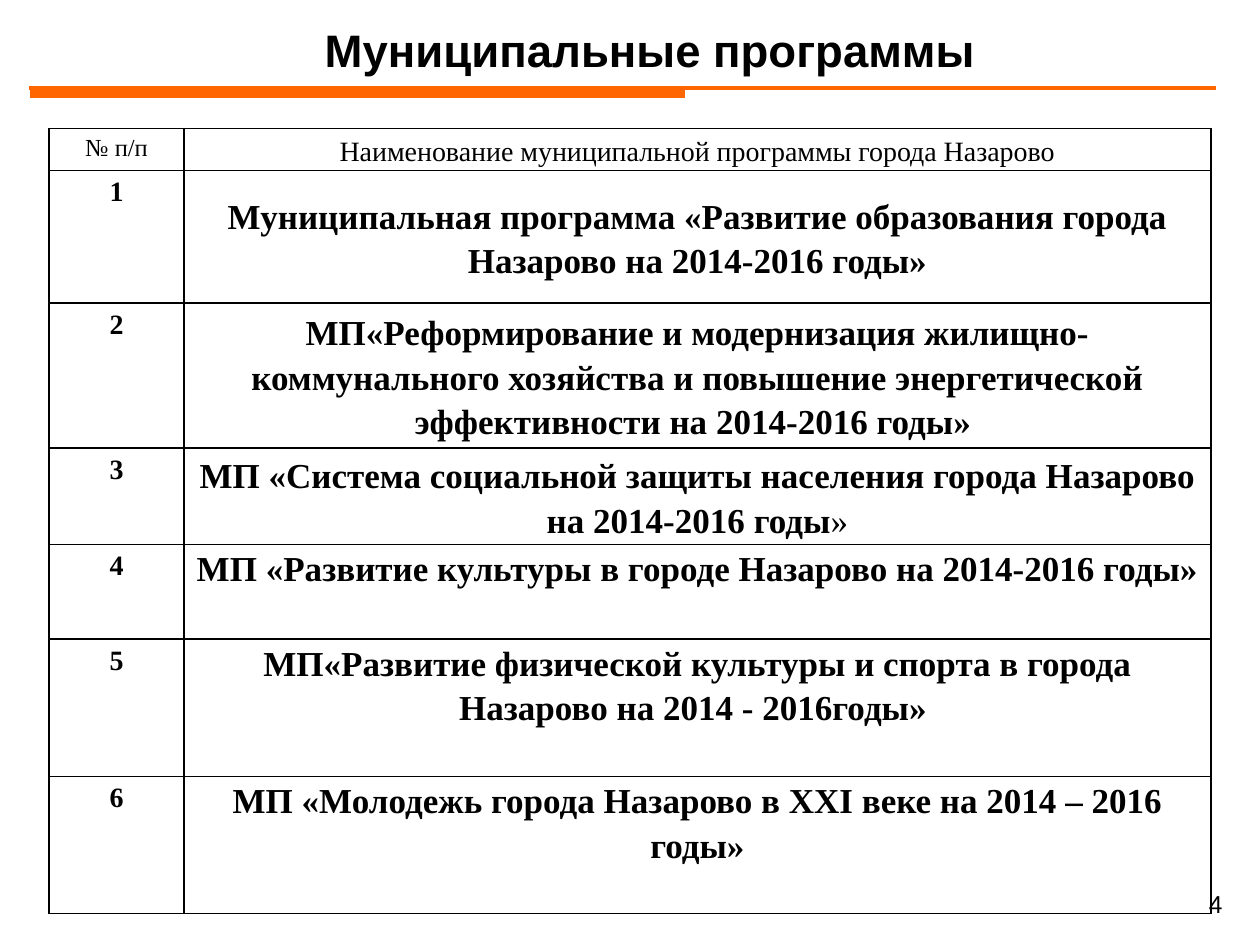
import pptx
import pptx.util
import pptx.dml.color
import pptx.enum.shapes
import pptx.enum.text
import pptx.oxml.ns
from lxml import etree

Inches, Pt = pptx.util.Inches, pptx.util.Pt
ALIGN = pptx.enum.text.PP_ALIGN
ANCHOR = pptx.enum.text.MSO_ANCHOR
qn = pptx.oxml.ns.qn

COLORS = {"text": "000000", "border": "000000", "rule": "FF6600"}
SERIF = "Times New Roman"

HEAD = ("№ п/п", "Наименование муниципальной программы города Назарово")
# Program name, text anchor
ITEMS = [
    ("Муниципальная программа «Развитие образования города Назарово "
     "на 2014-2016 годы»", ANCHOR.MIDDLE),
    ("МП«Реформирование и модернизация жилищно- коммунального хозяйства "
     "и повышение энергетической эффективности на 2014-2016 годы» ", ANCHOR.MIDDLE),
    ("МП «Система социальной защиты населения города Назарово "
     "на 2014-2016 годы»", ANCHOR.MIDDLE),
    ("МП «Развитие культуры в городе Назарово на 2014-2016 годы»", ANCHOR.TOP),
    ("МП«Развитие физической культуры и спорта в города Назарово "
     "на 2014 - 2016годы» ", ANCHOR.TOP),
    ("МП «Молодежь города Назарово в XXI веке на 2014 – 2016 годы»", ANCHOR.TOP),
]
COLS = [1.07, 8.15]
ROWS = [0.33, 1.05, 1.12, 0.75, 0.75, 1.09, 1.09]


def rgb(name):
    return pptx.dml.color.RGBColor.from_string(COLORS[name])


def style(par, size, font, bold=False, align=ALIGN.CENTER):
    par.alignment = align
    for run in par.runs:
        run.font.size = Pt(size)
        run.font.name = font
        run.font.bold = bold
        run.font.color.rgb = rgb("text")


def add_title(slide, text):
    title = slide.shapes.title
    title.left, title.top = Inches(0.12), Inches(0.16)
    title.width, title.height = Inches(9.88), Inches(0.47)
    frame = title.text_frame
    frame.text = text
    frame.vertical_anchor = ANCHOR.MIDDLE
    frame.margin_left = Inches(0.2)
    frame.margin_right = frame.margin_top = frame.margin_bottom = 0
    style(frame.paragraphs[0], 26, "Arial", True)


def add_rule(slide, left, right, y, width):
    line = slide.shapes.add_connector(
        pptx.enum.shapes.MSO_CONNECTOR.STRAIGHT,
        Inches(left), Inches(y), Inches(right), Inches(y))
    line.line.color.rgb = rgb("rule")
    line.line.width = Pt(width)
    etree.SubElement(line._element.spPr, qn("a:effectLst"))


def add_border(cell):
    props = cell._tc.get_or_add_tcPr()
    for i, side in enumerate(("a:lnL", "a:lnR", "a:lnT", "a:lnB")):
        edge = etree.Element(qn(side), w=str(Pt(1)))
        fill = etree.SubElement(edge, qn("a:solidFill"))
        etree.SubElement(fill, qn("a:srgbClr"), val=COLORS["border"])
        props.insert(i, edge)


def fill_cell(cell, text, size, bold):
    cell.text_frame.text = text
    cell.fill.background()
    add_border(cell)
    style(cell.text_frame.paragraphs[0], size, SERIF, bold)


def fill_name(cell, text, size, bold, anchor):
    fill_cell(cell, text, size, bold)
    cell.vertical_anchor = anchor
    cell.margin_left = cell.margin_right = Inches(0.07)
    cell.margin_top = cell.margin_bottom = 0
    cell.text_frame.paragraphs[0].line_spacing = 1.15


def add_list(slide):
    table = slide.shapes.add_table(
        len(ROWS), len(COLS), Inches(0.39), Inches(1.02),
        Inches(sum(COLS)), Inches(sum(ROWS))).table
    table.first_row = table.horz_banding = False
    for col, width in zip(table.columns, COLS):
        col.width = Inches(width)
    for row, height in zip(table.rows, ROWS):
        row.height = Inches(height)

    fill_cell(table.cell(0, 0), HEAD[0], 14, False)
    fill_name(table.cell(0, 1), HEAD[1], 16, False, ANCHOR.MIDDLE)
    for i, (name, anchor) in enumerate(ITEMS, 1):
        fill_cell(table.cell(i, 0), str(i), 16, True)
        fill_name(table.cell(i, 1), name, 20, True, anchor)

    # The closing quote of the third program is not bold
    par = table.cell(3, 1).text_frame.paragraphs[0]
    par.runs[0].text = par.runs[0].text[:-1]
    par.add_run().text = "»"
    style(par, 20, SERIF, True)
    par.runs[1].font.bold = False


def add_number(slide, text):
    box = slide.shapes.add_textbox(
        Inches(7.47), Inches(7.01), Inches(2.33), Inches(0.52))
    box.text_frame.word_wrap = True
    box.text_frame.text = text
    style(box.text_frame.paragraphs[0], 14, "Arial", align=ALIGN.RIGHT)


def main():
    deck = pptx.Presentation()
    deck.slide_width, deck.slide_height = Inches(10), Inches(7.5)
    slide = deck.slides.add_slide(deck.slide_layouts[5])
    add_number(slide, "4")
    add_title(slide, "Муниципальные программы")
    add_list(slide)
    # Double rule under the title
    add_rule(slide, 0.24, 5.44, 0.74, 6)
    add_rule(slide, 0.23, 9.65, 0.7, 2.25)
    deck.save("out.pptx")


if __name__ == "__main__":
    main()
